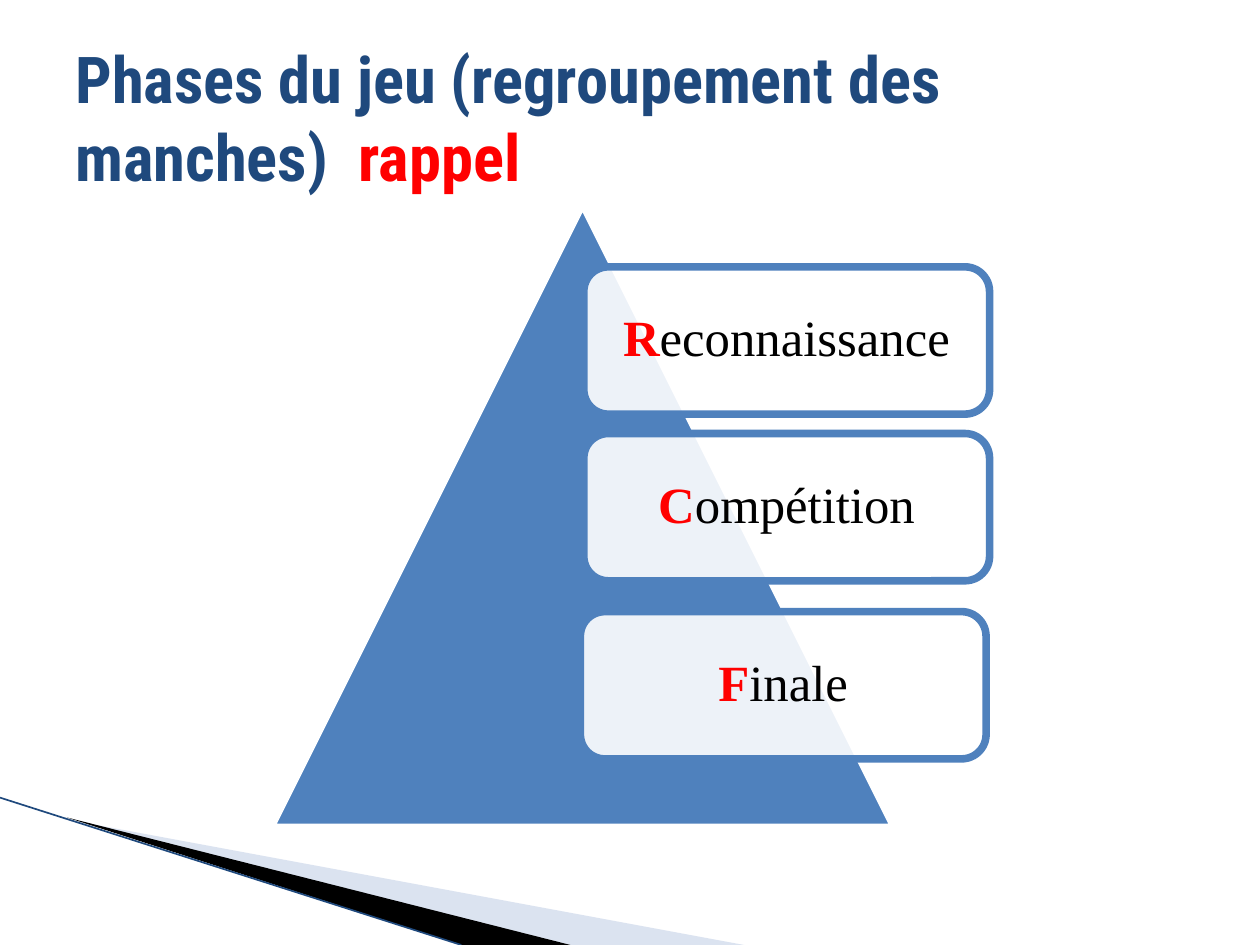
from dataclasses import dataclass

from lxml import etree
from pptx import Presentation
from pptx.dml.color import RGBColor
from pptx.enum.shapes import MSO_CONNECTOR, MSO_SHAPE
from pptx.enum.text import MSO_ANCHOR, PP_ALIGN
from pptx.oxml.ns import qn
from pptx.util import Cm, Pt

TRIANGLE = MSO_SHAPE.ISOSCELES_TRIANGLE
ROUNDED = MSO_SHAPE.ROUNDED_RECTANGLE
STRAIGHT = MSO_CONNECTOR.STRAIGHT
MIDDLE = MSO_ANCHOR.MIDDLE
CENTER = PP_ALIGN.CENTER
BLUE, WHITE, RED, BLACK, NAVY = "4F81BD", "FFFFFF", "FF0000", "000000", "1F497D"
OUTLINE_WIDTH = Pt(4.33)


@dataclass
class Phase:
    initial: str
    rest: str
    left: float
    top: float


@dataclass
class Wedge:
    points: list[tuple[float, float]]
    color: str
    opacity: int = 100


PHASES = [
    Phase("R", "econnaissance", 11.77, 5.38),
    Phase("C", "ompétition", 11.77, 8.74),
    Phase("F", "inale", 11.7, 12.33),
]
WEDGES = [
    Wedge([(1.4, 16.53), (15.0, 19.05), (11.5, 19.05)], "A7B9DB", 40),
    Wedge([(1.35, 16.48), (11.5, 19.05), (9.3, 19.05)], BLACK),
]


def rgb(color: str) -> RGBColor:
    return RGBColor.from_string(color)


def fill_shape(shape, color: str, opacity: int = 100) -> None:
    shape.shadow.inherit = False
    shape.fill.solid()
    shape.fill.fore_color.rgb = rgb(color)
    if opacity < 100:
        color_element = shape.fill._xPr.find(qn("a:solidFill"))[0]
        etree.SubElement(color_element, qn("a:alpha"), val=str(opacity * 1000))


def outline_shape(shape, color: str) -> None:
    shape.line.color.rgb = rgb(color)
    shape.line.width = OUTLINE_WIDTH


def add_run(paragraph, text: str, font_name: str, size: float, color: str, bold: bool) -> None:
    run = paragraph.add_run()
    run.text = text
    run.font.name = font_name
    run.font.size = Pt(size)
    run.font.bold = bold
    run.font.color.rgb = rgb(color)


def draw_wedge(slide, wedge: Wedge) -> None:
    first, *others = [(Cm(x), Cm(y)) for x, y in wedge.points]
    builder = slide.shapes.build_freeform(*first)
    builder.add_line_segments(others, close=True)
    shape = builder.convert_to_shape()
    fill_shape(shape, wedge.color, wedge.opacity)
    shape.line.fill.background()


def draw_edge_line(slide) -> None:
    line = slide.shapes.add_connector(STRAIGHT, 0, Cm(16.08), Cm(9.3), Cm(19.05))
    line.line.color.rgb = rgb(NAVY)
    line.line.width = Pt(0.95)
    etree.SubElement(line._element.spPr, qn("a:effectLst"))


def draw_pyramid(slide) -> None:
    pyramid = slide.shapes.add_shape(TRIANGLE, Cm(5.46), Cm(4.11), Cm(12.57), Cm(12.57))
    fill_shape(pyramid, BLUE)
    outline_shape(pyramid, WHITE)


def draw_phase(slide, phase: Phase) -> None:
    box = slide.shapes.add_shape(ROUNDED, Cm(phase.left), Cm(phase.top), Cm(8.18), Cm(2.97))
    fill_shape(box, WHITE, 90)
    outline_shape(box, BLUE)
    frame = box.text_frame
    frame.word_wrap = True
    frame.vertical_anchor = MIDDLE
    frame.margin_left = frame.margin_right = Cm(0.3)
    frame.margin_top = frame.margin_bottom = Cm(0.3)
    paragraph = frame.paragraphs[0]
    paragraph.alignment = CENTER
    paragraph.line_spacing = 0.9
    add_run(paragraph, phase.initial, "Times New Roman", 29, RED, True)
    add_run(paragraph, phase.rest, "Times New Roman", 29, BLACK, False)


def draw_title(slide) -> None:
    title = slide.shapes.add_textbox(Cm(1.27), Cm(0.76), Cm(22.86), Cm(3.18))
    frame = title.text_frame
    frame.word_wrap = True
    frame.vertical_anchor = MIDDLE
    paragraph = frame.paragraphs[0]
    for text, color in (("Phases du jeu (regroupement des manches)  ", NAVY), ("rappel", RED)):
        add_run(paragraph, text, "Roboto Condensed", 36.9, color, True)


def main() -> None:
    presentation = Presentation()
    presentation.slide_width = Cm(25.4)
    presentation.slide_height = Cm(19.05)
    slide = presentation.slides.add_slide(presentation.slide_layouts[6])
    for wedge in WEDGES:
        draw_wedge(slide, wedge)
    draw_edge_line(slide)
    draw_pyramid(slide)
    for phase in PHASES:
        draw_phase(slide, phase)
    draw_title(slide)
    presentation.save("out.pptx")


if __name__ == "__main__":
    main()
